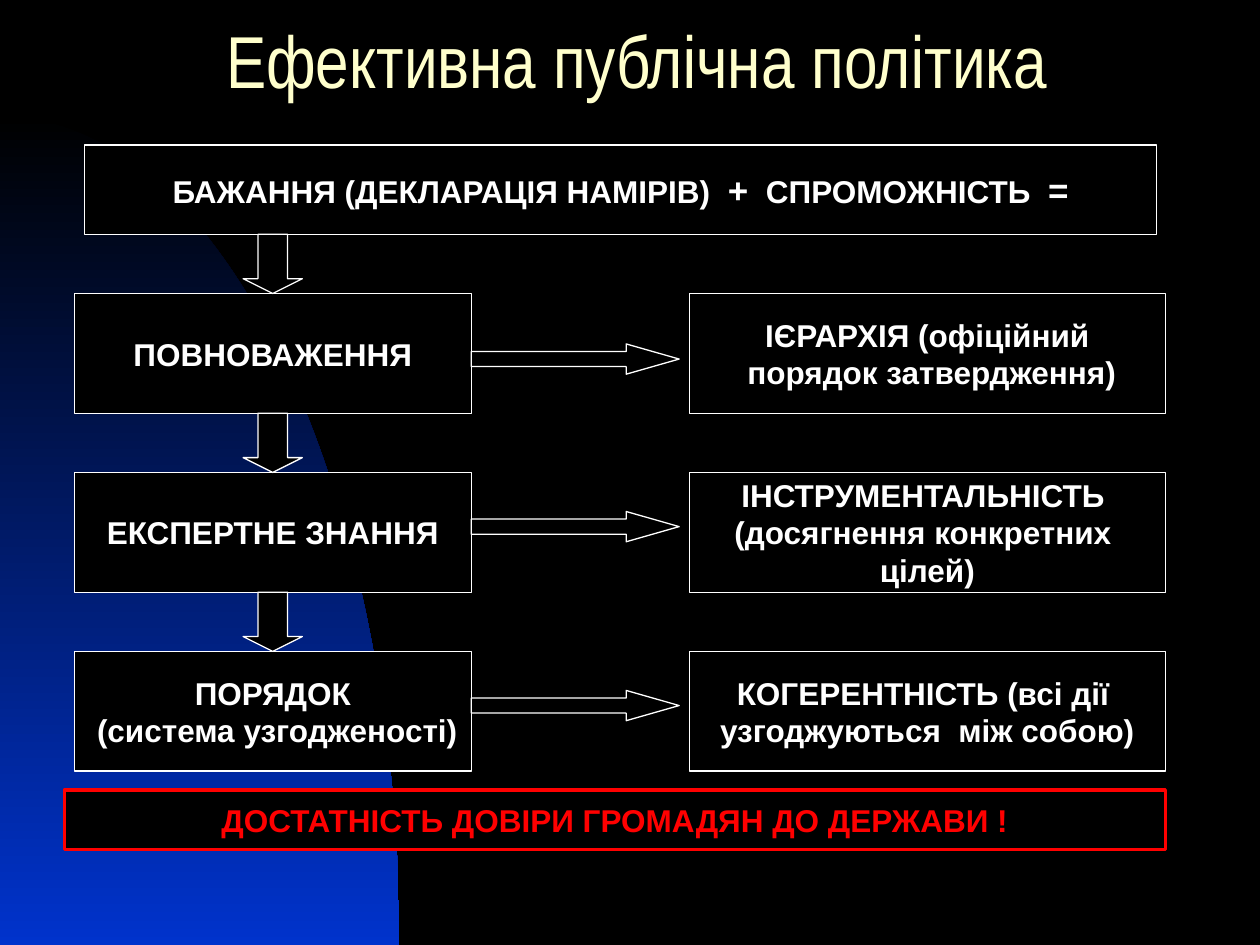
"""Build the slide on effective public policy: a flow of three capacities and their results."""
import math
from pptx import Presentation, util as u
from pptx.dml.color import RGBColor
from pptx.enum import shapes, text

BLACK = RGBColor(0x00, 0x00, 0x00)
WHITE = RGBColor(0xFF, 0xFF, 0xFF)
BLUE = RGBColor(0x00, 0x33, 0xCC)
CREAM = RGBColor(0xFF, 0xFF, 0xCC)
RED = RGBColor(0xFF, 0x00, 0x00)
KIND = shapes.MSO_SHAPE

LEFT, LEFT_WIDTH = 0.59, 3.15
RIGHT, RIGHT_WIDTH = 5.47, 3.78
TOP, PITCH, BOX_HEIGHT = 2.33, 1.42, 0.95
GAP = PITCH - BOX_HEIGHT
ARC_WIDTH, ARC_HEIGHT, ARC_STEPS = 3.17, 6.58, 90

ROWS = [
    (["ПОВНОВАЖЕННЯ"], ["ІЄРАРХІЯ (офіційний", " порядок затвердження)"], 0.4),
    (["ЕКСПЕРТНЕ ЗНАННЯ"],
     ["ІНСТРУМЕНТАЛЬНІСТЬ ", "(досягнення конкретних ", "цілей)"], 0.31),
    (["ПОРЯДОК", " (система узгодженості)"],
     ["КОГЕРЕНТНІСТЬ (всі дії ", "узгоджуються  між собою)"], 0.31),
]


def add_outlined(kind, left, top, width, height, color=WHITE, weight=0.75):
    shape = slide.shapes.add_shape(kind, *map(u.Inches, (left, top, width, height)))
    shape.shadow.inherit = False
    shape.fill.solid()
    shape.fill.fore_color.rgb = BLACK
    shape.line.color.rgb = color
    shape.line.width = u.Pt(weight)
    return shape


def write_lines(box, lines, color=WHITE):
    frame = box.text_frame
    frame.word_wrap = False
    frame.vertical_anchor = text.MSO_ANCHOR.MIDDLE
    frame.text = "\n".join(lines)
    for para in frame.paragraphs:
        para.alignment = text.PP_ALIGN.CENTER
        para.font.name = "Arial"
        for span in para.runs:
            span.font.name, span.font.size, span.font.bold = "Arial", u.Pt(18), True
            span.font.color.rgb = color


deck = Presentation()
deck.slide_width, deck.slide_height = u.Inches(10), u.Inches(7.5)
slide = deck.slides.add_slide(deck.slide_layouts[5])
slide.background.fill.solid()
slide.background.fill.fore_color.rgb = BLACK

angles = [math.pi / 2 * step / ARC_STEPS for step in range(ARC_STEPS + 1)]
curve = [(u.Inches(ARC_WIDTH * math.sin(angle)),
          u.Inches(7.5 - ARC_HEIGHT * math.cos(angle))) for angle in angles]
builder = slide.shapes.build_freeform(0, deck.slide_height)
builder.add_line_segments(curve, close=True)
arc = builder.convert_to_shape()
arc.shadow.inherit = False
arc.line.fill.background()
arc.fill.gradient()
arc.fill.gradient_angle = 270
for stop, color, position in zip(arc.fill.gradient_stops, (BLACK, BLUE), (0, 1)):
    stop.color.rgb = color
    stop.position = position

title = slide.shapes.title
title.left, title.top, title.width, title.height = map(u.Inches, (0.27, 0.21, 9.57, 0.69))
title.text_frame.text = "Ефективна публічна політика"
title.text_frame.auto_size = text.MSO_AUTO_SIZE.NONE
title.text_frame.vertical_anchor = text.MSO_ANCHOR.MIDDLE
para = title.text_frame.paragraphs[0]
para.alignment = text.PP_ALIGN.CENTER
para.line_spacing = 0.7
span = para.runs[0]
span.font.name, span.font.size = "Arial Narrow", u.Pt(42)
span.font.color.rgb = CREAM

formula = add_outlined(KIND.RECTANGLE, 0.67, 1.15, 8.51, 0.71)
write_lines(formula, ["БАЖАННЯ (ДЕКЛАРАЦІЯ НАМІРІВ)  "])
para = formula.text_frame.paragraphs[0]
for words, size in (("+", 20), ("  СПРОМОЖНІСТЬ  ", 18), ("=", 20)):
    span = para.add_run()
    span.text = words
    span.font.name, span.font.size, span.font.bold = "Arial", u.Pt(size), True
    span.font.color.rgb = WHITE

for row, (capacity, result, arrow_offset) in enumerate(ROWS):
    top = TOP + row * PITCH
    write_lines(add_outlined(KIND.RECTANGLE, LEFT, top, LEFT_WIDTH, BOX_HEIGHT), capacity)
    write_lines(add_outlined(KIND.RECTANGLE, RIGHT, top, RIGHT_WIDTH, BOX_HEIGHT), result)
    down = add_outlined(KIND.DOWN_ARROW, LEFT + (LEFT_WIDTH - GAP) / 2, top - GAP, GAP, GAP)
    down.adjustments[1] = 0.25
    across = add_outlined(KIND.RIGHT_ARROW, LEFT + LEFT_WIDTH, top + arrow_offset, 1.65, 0.24)
    across.adjustments[1] = 1.75

trust = add_outlined(KIND.RECTANGLE, 0.51, 6.27, 8.74, 0.47, RED, 1.75)
write_lines(trust, ["ДОСТАТНІСТЬ ДОВІРИ ГРОМАДЯН ДО ДЕРЖАВИ !"], RED)

deck.save("out.pptx")
